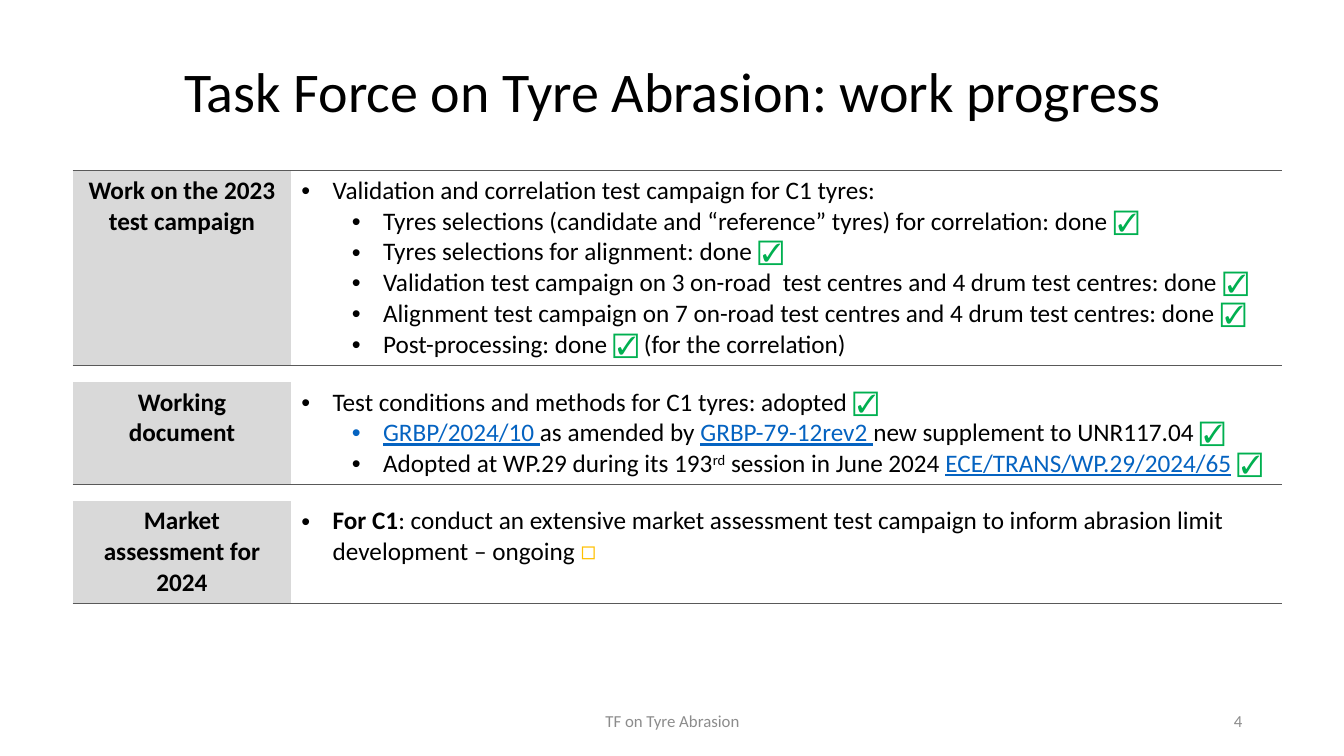
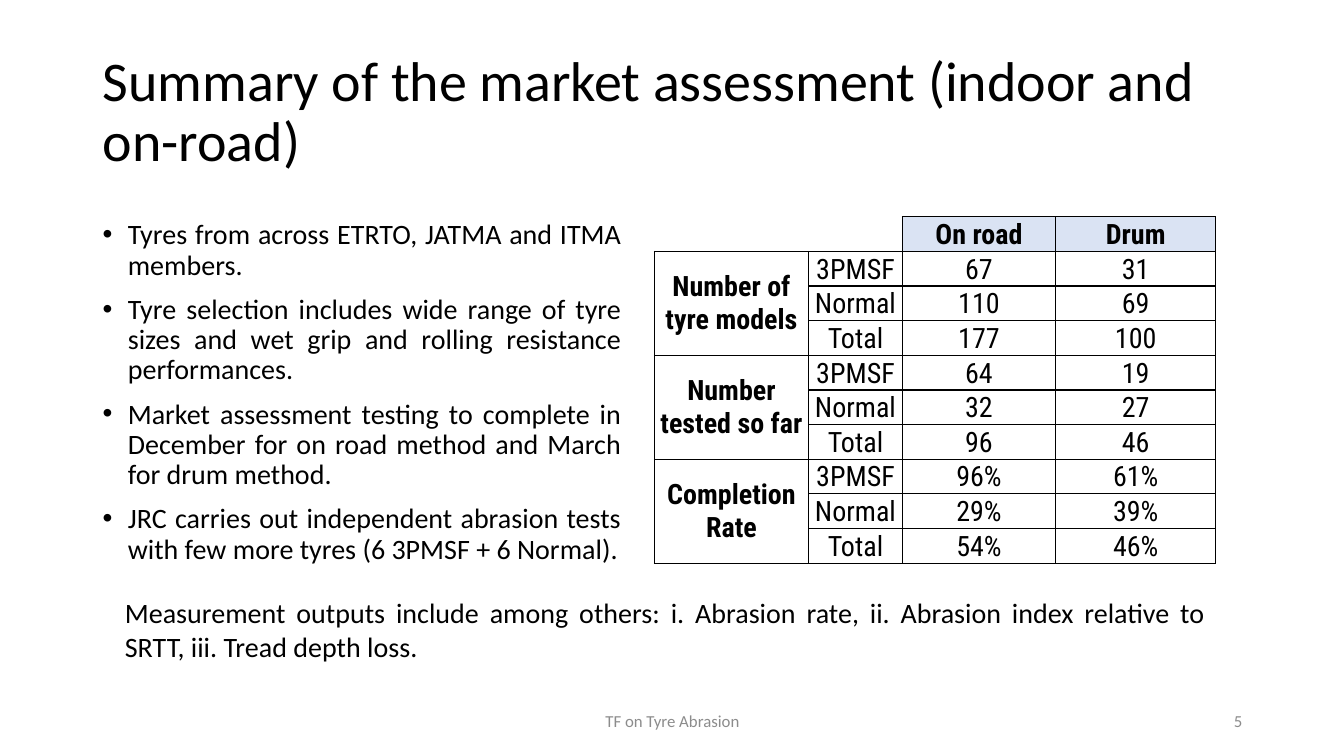
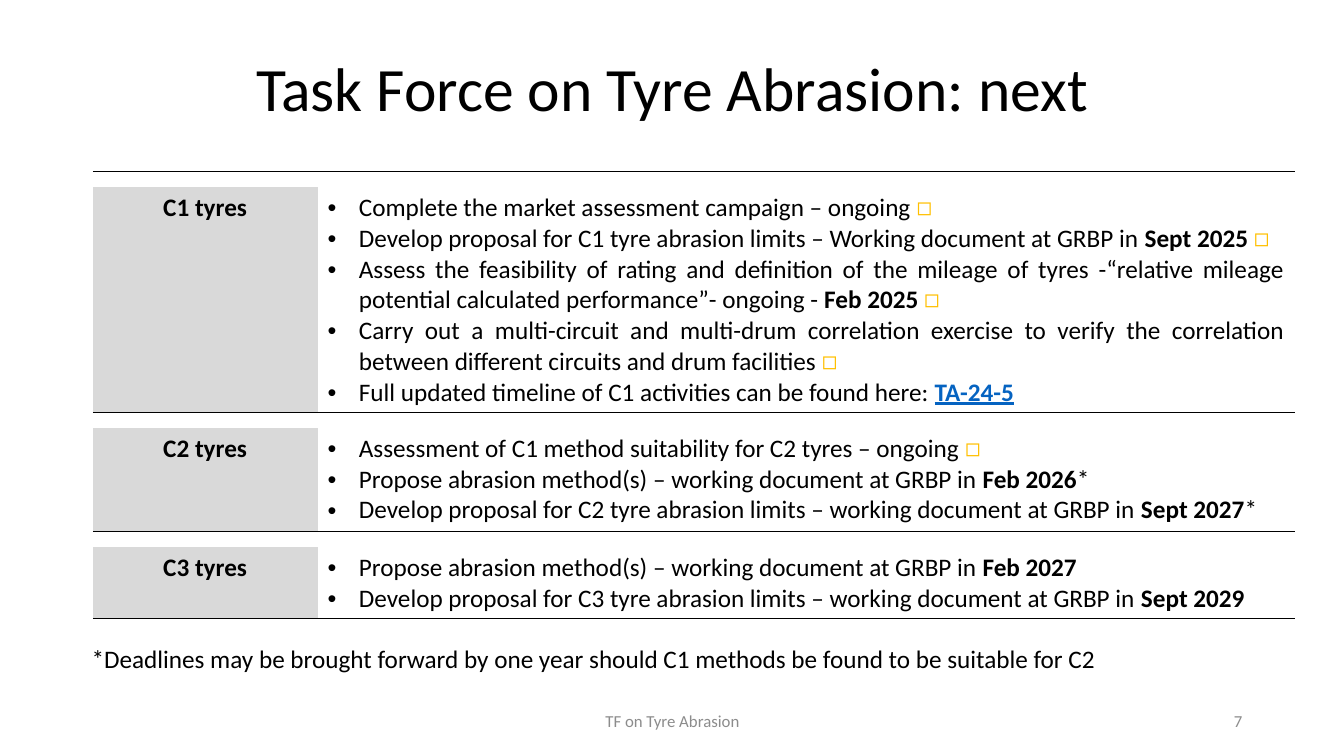
"""Build three slides on the progress of the tyre abrasion task force."""
from lxml import etree
from pptx import Presentation
from pptx.dml.color import RGBColor
from pptx.enum.text import MSO_ANCHOR, MSO_AUTO_SIZE, PP_ALIGN
from pptx.oxml.ns import qn
from pptx.util import Inches, Pt

LEFT, CENTER, RIGHT, JUSTIFY = PP_ALIGN.LEFT, PP_ALIGN.CENTER, PP_ALIGN.RIGHT, PP_ALIGN.JUSTIFY
MIDDLE, BOTTOM = MSO_ANCHOR.MIDDLE, MSO_ANCHOR.BOTTOM
NO_AUTOFIT = MSO_AUTO_SIZE.NONE
BLACK = RGBColor(0x00, 0x00, 0x00)
WHITE = RGBColor(0xFF, 0xFF, 0xFF)
GREY = RGBColor(0xD9, 0xD9, 0xD9)
RULE_GREY = RGBColor(0x59, 0x59, 0x59)
FOOTER_GREY = RGBColor(0x8C, 0x8C, 0x8C)
HEADER_BLUE = RGBColor(0xDA, 0xE3, 0xF3)
LINK_BLUE = RGBColor(0x05, 0x63, 0xC1)
GREEN = RGBColor(0x00, 0xB0, 0x50)
AMBER = RGBColor(0xFF, 0xC0, 0x00)
FONT, TABLE_FONT = "Calibri", "Roboto Condensed"
NO_STYLE = "{2D5ABB26-0587-4C30-8999-92F81FD0307C}"
RUN_COLORS = {"link": LINK_BLUE, "boldlink": LINK_BLUE, "done": GREEN, "open": AMBER}
DONE, OPEN = ("☑", "done"), ("◻", "open")


def write(p, runs, size, align=LEFT, color=BLACK, font=FONT, indent=None, hang=0.31):
    """Fill a paragraph with plain strings or (text, style) pairs, bulleted if indented."""
    p.alignment = align
    if indent is not None:
        pPr = p._p.get_or_add_pPr()
        pPr.set("marL", str(Inches(indent)))
        pPr.set("indent", str(-Inches(hang)))
        etree.SubElement(pPr, qn("a:buFont"), typeface="Arial")
        etree.SubElement(pPr, qn("a:buChar"), char="•")
    for run in runs:
        text, style = (run, "") if isinstance(run, str) else run
        r = p.add_run()
        r.text = text
        r.font.name, r.font.size = font, Pt(size)
        r.font.color.rgb = RUN_COLORS.get(style, color)
        r.font.bold = style in ("bold", "boldlink")
        r.font.underline = style in ("link", "boldlink")
        if style == "super":
            r.font._element.set("baseline", "30000")


def format_cell(cell, fill=None, sides="", color=BLACK):
    """Set the fill of a cell and draw its borders on the given sides."""
    if fill is None:
        cell.fill.background()
    else:
        cell.fill.solid()
        cell.fill.fore_color.rgb = fill
    tcPr = cell._tc.get_or_add_tcPr()
    for i, side in enumerate(s for s in "LRTB" if s in sides):
        ln = etree.Element(qn(f"a:ln{side}"), w=str(Pt(1)))
        solid = etree.SubElement(ln, qn("a:solidFill"))
        etree.SubElement(solid, qn("a:srgbClr"), val=str(color))
        tcPr.insert(i, ln)
    if not cell.text_frame.text:
        cell.margin_top = cell.margin_bottom = 0
        etree.SubElement(cell.text_frame.paragraphs[0]._p, qn("a:endParaRPr"), sz="500")


prs = Presentation()
prs.slide_width, prs.slide_height = Inches(13.33), Inches(7.5)

TITLES = [
    ("Task Force on Tyre Abrasion: work progress", 0.21, 1.45, 40, CENTER, "4"),
    ("Summary of the market assessment (indoor and on-road)", 0.4, 1.45, 40, LEFT, "5"),
    ("Task Force on Tyre Abrasion: next", 0.4, 1.01, 44, CENTER, "7"),
]
for title, top, height, size, align, number in TITLES:
    s = prs.slides.add_slide(prs.slide_layouts[5])
    sp = s.shapes.title
    sp.left, sp.top, sp.width, sp.height = Inches(0.92), Inches(top), Inches(11.5), Inches(height)
    tf = sp.text_frame
    tf.auto_size, tf.vertical_anchor = NO_AUTOFIT, MIDDLE
    write(tf.paragraphs[0], [title], size, align)
    tf.paragraphs[0].line_spacing = 0.9
    for text, left, width, side in (("TF on Tyre Abrasion", 4.42, 4.5, CENTER), (number, 9.42, 3, RIGHT)):
        tf = s.shapes.add_textbox(Inches(left), Inches(6.95), Inches(width), Inches(0.4)).text_frame
        tf.word_wrap, tf.vertical_anchor = True, MIDDLE
        write(tf.paragraphs[0], [text], 12, side, FOOTER_GREY)
progress, summary, next_steps = prs.slides

PROGRESS_ROWS = [
    ("Work on the 2023 test campaign", 1.94, [
        (0, ["Validation and correlation test campaign for C1 tyres:"]),
        (1, ["Tyres selections (candidate and “reference” tyres) for correlation: done ", DONE]),
        (1, ["Tyres selections for alignment: done ", DONE]),
        (1, ["Validation test campaign on 3 on-road  test centres and 4 drum test centres: done ", DONE]),
        (1, ["Alignment test campaign on 7 on-road test centres and 4 drum test centres: done ", DONE]),
        (1, ["Post-processing: done ", DONE, " (for the correlation)"]),
    ]),
    None,
    ("Working document", 1.02, [
        (0, ["Test conditions and methods for C1 tyres: adopted ", DONE]),
        (1, [("GRBP/2024/10 ", "link"), "as amended by ", ("GRBP-79-12rev2 ", "link"),
             "new supplement to UNR117.04 ", DONE]),
        (1, ["Adopted at WP.29 during its 193", ("rd", "super"), " session in June 2024 ",
             ("ECE/TRANS/WP.29/2024/65", "link"), " ", DONE]),
    ]),
    None,
    ("Market assessment for 2024", 1.02, [
        (0, [("For C1", "bold"), ": conduct an extensive market assessment test campaign to inform "
             "abrasion limit development – ongoing ", OPEN]),
    ]),
]
NEXT_ROWS = [
    None,
    ("C1 tyres", 2.23, [
        (0, ["Complete the market assessment campaign – ongoing ", OPEN]),
        (0, ["Develop proposal for C1 tyre abrasion limits – Working document at GRBP in ",
             ("Sept 2025 ", "bold"), OPEN]),
        (0, ["Assess the feasibility of rating and definition of the mileage of tyres -“relative mileage "
             "potential calculated performance”- ongoing - ", ("Feb 2025 ", "bold"), OPEN]),
        (0, ["Carry out a multi-circuit and multi-drum correlation exercise to verify the correlation "
             "between different circuits and drum facilities ", OPEN]),
        (0, ["Full updated timeline of C1 activities can be found here: ", ("TA-24-5", "boldlink")]),
    ]),
    None,
    ("C2 tyres", 1.02, [
        (0, ["Assessment of C1 method suitability for C2 tyres – ongoing ", OPEN]),
        (0, ["Propose abrasion method(s) – working document at GRBP in ", ("Feb 2026", "bold"), "*"]),
        (0, ["Develop proposal for C2 tyre abrasion limits – working document at GRBP in ",
             ("Sept 2027", "bold"), "*"]),
    ]),
    None,
    ("C3 tyres", 0.71, [
        (0, ["Propose abrasion method(s) – working document at GRBP in ", ("Feb 2027", "bold")]),
        (0, ["Develop proposal for C3 tyre abrasion limits – working document at GRBP in ",
             ("Sept 2029", "bold")]),
    ]),
]
STATUS_TABLES = [
    (progress, PROGRESS_ROWS, 0.72, 1.69, (2.17, 9.83), LEFT, RULE_GREY, WHITE),
    (next_steps, NEXT_ROWS, 0.92, 1.7, (2.23, 9.69), JUSTIFY, BLACK, None),
]
for s, rows, left, top, widths, align, rule, spacer_fill in STATUS_TABLES:
    heights = [row[1] if row else 0.16 for row in rows]
    gf = s.shapes.add_table(len(rows), 2, Inches(left), Inches(top), Inches(sum(widths)), Inches(sum(heights)))
    gf._element.xpath(".//a:tableStyleId")[0].text = NO_STYLE
    table = gf.table
    table.first_row = table.horz_banding = False
    for col, width in zip(table.columns, widths):
        col.width = Inches(width)
    for i, row in enumerate(rows):
        table.rows[i].height = Inches(heights[i])
        label, body = table.cell(i, 0), table.cell(i, 1)
        if row:
            write(label.text_frame.paragraphs[0], [(row[0], "bold")], 18, CENTER)
            for n, (level, runs) in enumerate(row[2]):
                tf = body.text_frame
                p = tf.add_paragraph() if n else tf.paragraphs[0]
                p.level = level
                write(p, runs, 18, align, indent=0.31 + 0.5 * level)
        sides = ("T" if i == 0 else "") + ("B" if row else "")
        color = BLACK if sides == "T" else rule
        format_cell(label, GREY if row else spacer_fill, sides, color)
        format_cell(body, None, sides, color)

MARKET_POINTS = [
    "Tyres from across ETRTO, JATMA and ITMA members.",
    "Tyre selection includes wide range of tyre sizes and wet grip and rolling resistance performances.",
    "Market assessment testing to complete in December for on road method and March for drum method.",
    "JRC carries out independent abrasion tests with few more tyres (6 3PMSF + 6 Normal).",
]
tf = summary.shapes.add_textbox(Inches(0.92), Inches(2.14), Inches(5.34), Inches(3.32)).text_frame
tf.word_wrap = True
for n, point in enumerate(MARKET_POINTS):
    p = tf.add_paragraph() if n else tf.paragraphs[0]
    write(p, [point], 20, JUSTIFY, indent=0.25, hang=0.25)
    p.line_spacing = 0.9
    if n:
        p.space_before = Pt(10)

MARKET_GROUPS = [
    ("Number of tyre models", [("67", "31"), ("110", "69"), ("177", "100")]),
    ("Number tested so far", [("64", "19"), ("32", "27"), ("96", "46")]),
    ("Completion Rate", [("96%", "61%"), ("29%", "39%"), ("54%", "46%")]),
]
cells = [("", "", "On road", "Drum")]
borders = [("B", "RB", "LTB", "RTB")]
for label, values in MARKET_GROUPS:
    for k, kind in enumerate(("3PMSF", "Normal", "Total")):
        cells.append((label if k == 0 else "", kind, *values[k]))
        edge = ("T", "B", "TB")[k]
        borders.append((("LRTB", "LR", "LRB")[k], "LR" + edge, "L" + edge, "R" + edge))

widths = (1.53, 0.93, 1.52, 1.59)
gf = summary.shapes.add_table(len(cells), 4, Inches(6.49), Inches(2.15), Inches(sum(widths)), Inches(3.3))
gf._element.xpath(".//a:tableStyleId")[0].text = NO_STYLE
table = gf.table
table.first_row = table.horz_banding = False
for col, width in zip(table.columns, widths):
    col.width = Inches(width)
for i, texts in enumerate(cells):
    table.rows[i].height = Inches(0.33)
    for j, text in enumerate(texts):
        cell = table.cell(i, j)
        cell.margin_left = cell.margin_right = cell.margin_top = Inches(0.01)
        cell.margin_bottom = 0
        cell.vertical_anchor = BOTTOM if j else MIDDLE
        if text:
            style = "bold" if i == 0 or j == 0 else ""
            write(cell.text_frame.paragraphs[0], [(text, style)], 20, CENTER, font=TABLE_FONT)
        format_cell(cell, HEADER_BLUE if i == 0 and text else None, borders[i][j])
for i in range(1, len(cells), 3):
    table.cell(i, 0).merge(table.cell(i + 2, 0))

NOTES = [
    (summary, 1.14, 5.86, 10.91, 0.78, 20, JUSTIFY,
     "Measurement outputs include among others: i. Abrasion rate, ii. Abrasion index relative to SRTT, "
     "iii. Tread depth loss."),
    (next_steps, 0.81, 6.33, 11.32, 0.4, 18, LEFT,
     "*Deadlines may be brought forward by one year should C1 methods be found to be suitable for C2"),
]
for s, left, top, width, height, size, align, text in NOTES:
    tf = s.shapes.add_textbox(Inches(left), Inches(top), Inches(width), Inches(height)).text_frame
    tf.word_wrap = True
    write(tf.paragraphs[0], [text], size, align)

prs.save("out.pptx")
